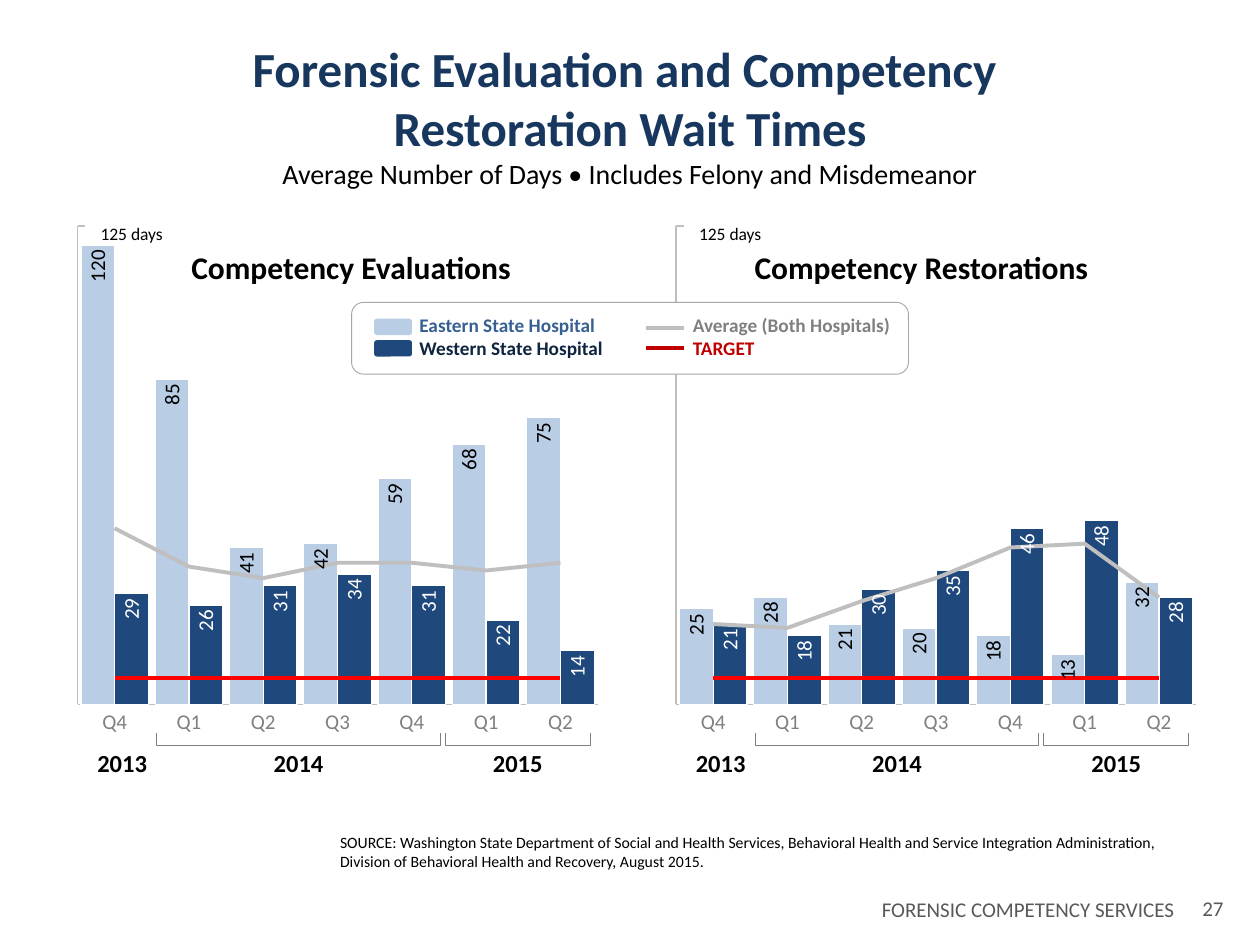
from lxml import etree
from pptx import Presentation
from pptx.chart.data import CategoryChartData
from pptx.dml.color import RGBColor
from pptx.enum.chart import XL_CHART_TYPE as CT, XL_LABEL_POSITION as LP
from pptx.enum.chart import XL_MARKER_STYLE as MS, XL_TICK_LABEL_POSITION as TLP, XL_TICK_MARK as TM
from pptx.enum.shapes import MSO_CONNECTOR as CONN, MSO_SHAPE as SHP
from pptx.enum.text import PP_ALIGN as AL
from pptx.oxml import parse_xml
from pptx.oxml.ns import nsdecls, qn
from pptx.util import Inches, Pt

rgb = RGBColor.from_string
prs = Presentation()
prs.slide_width, prs.slide_height = Inches(10), Inches(7.5)
COL, ROW = prs.slide_width / 10, prs.slide_height / 7.5
s = prs.slides.add_slide(prs.slide_layouts[6])


def grid(x, y, x2, y2):
    return int(x * COL), int(y * ROW), int(x2 * COL), int(y2 * ROW)


def add_text(place, lines, align=AL.LEFT, inset=True):
    tf = s.shapes.add_textbox(*grid(*place)).text_frame
    tf.word_wrap = True
    if not inset:
        tf.margin_left = tf.margin_right = tf.margin_top = tf.margin_bottom = 0
    for i, (text, size, color, bold) in enumerate(lines):
        p = tf.add_paragraph() if i else tf.paragraphs[0]
        p.alignment = align
        r = p.add_run()
        r.text = text
        r.font.name, r.font.size, r.font.bold = "Calibri", Pt(size), bold
        r.font.color.rgb = rgb(color)


# Title
add_text((0.31, 0.26, 9.38, 1.31), [
    ("Forensic Evaluation and Competency ", 28, "17375E", True),
    ("Restoration Wait Times", 28, "17375E", True),
    ("Average Number of Days • Includes Felony and Misdemeanor", 16, "000000", False),
], AL.CENTER)

# Two panels: chart, heading, scale note and year brackets
panels = [
    (0.53, "Competency Evaluations", 1.42,
     [120, 85, 41, 42, 59, 68, 75], [29, 26, 31, 34, 31, 22, 14], [46, 36, 33, 37, 37, 35, 37]),
    (5.28, "Competency Restorations", 5.89,
     [25, 28, 21, 20, 18, 13, 32], [21, 18, 30, 35, 46, 48, 28], [21, 20, 27, 33, 41, 42, 28]),
]
for left, heading, heading_left, eastern, western, average in panels:
    data = CategoryChartData(number_format="General")
    data.categories = ["Q4", "Q1", "Q2", "Q3", "Q4", "Q1", "Q2"]
    data.add_series("Series 1", eastern)
    data.add_series("Series 2", western)
    data.add_series("Series 3", [7] * 7)
    data.add_series("Series 4", average)
    chart = s.shapes.add_chart(CT.COLUMN_CLUSTERED, *grid(left, 1.71, 4.3, 4.22), data).chart
    chart.has_title = chart.has_legend = False
    chart.font.name, chart.font.size = "Calibri", Pt(18)
    chart.font.color.rgb = rgb("000000")

    # Target and average become lines on the same axes
    bars = chart.plots[0]
    bar_xml = bars._element
    line_xml = parse_xml(f'<c:lineChart {nsdecls("c")}><c:grouping val="standard"/>'
                         '<c:varyColors val="0"/></c:lineChart>')
    for ser in bar_xml.findall(qn("c:ser"))[2:]:
        for bar_only in ser.findall(qn("c:invertIfNegative")):
            ser.remove(bar_only)
        line_xml.append(ser)
    etree.SubElement(line_xml, qn("c:marker")).set("val", "1")
    for axis_id in bar_xml.findall(qn("c:axId")):
        etree.SubElement(line_xml, qn("c:axId")).set("val", axis_id.get("val"))
    bar_xml.addnext(line_xml)

    # Fixed plot area
    plot_area = bar_xml.getparent()
    for old in plot_area.findall(qn("c:layout")):
        plot_area.remove(old)
    plot_area.insert(0, parse_xml(
        f'<c:layout {nsdecls("c")}><c:manualLayout><c:layoutTarget val="inner"/>'
        '<c:xMode val="edge"/><c:yMode val="edge"/><c:x val="0.02"/><c:y val="0.02"/>'
        '<c:w val="0.96"/><c:h val="0.9"/></c:manualLayout></c:layout>'))

    # Bars with upright labels
    bars.gap_width, bars.overlap, bars.vary_by_categories = 20, 0, False
    for ser, fill, ink in zip(bars.series, ("B9CDE5", "1F497D"), ("000000", "FFFFFF")):
        ser.format.fill.solid()
        ser.format.fill.fore_color.rgb = rgb(fill)
        ser.format.line.color.rgb = rgb("FFFFFF")
        ser.format.line.width = Pt(0.75)
        labels = ser.data_labels
        labels.show_value, labels.position = True, LP.INSIDE_END
        labels.number_format, labels.number_format_is_linked = "#,##0", False
        labels.font.size = Pt(12)
        labels.font.color.rgb = rgb(ink)
        body = labels._element.find(qn("c:txPr")).find(qn("a:bodyPr"))
        body.set("rot", "-5400000")
        body.set("vert", "horz")

    # Lines
    for ser, color in zip(chart.plots[1].series, ("FF0000", "BFBFBF")):
        ser.format.line.color.rgb = rgb(color)
        ser.format.line.width = Pt(2.25)
        ser.marker.style = MS.NONE
        ser.smooth = False

    # Axes
    cat, val = chart.category_axis, chart.value_axis
    cat.major_tick_mark = TM.NONE
    cat.tick_labels.font.size = Pt(12)
    cat.tick_labels.font.color.rgb = rgb("808080")
    val.minimum_scale, val.maximum_scale, val.major_unit = 0, 125, 125
    val.has_major_gridlines = False
    val.major_tick_mark, val.tick_label_position = TM.INSIDE, TLP.NONE
    for axis in (cat, val):
        axis.format.line.color.rgb = rgb("BFBFBF")
        axis.format.line.width = Pt(0.75)

    add_text((heading_left, 1.92, 3.5, 0.4), [(heading, 18, "000000", True)])
    add_text((left + 0.17, 1.72, 0.73, 0.27), [("125 days", 10, "000000", False)])

    # Years, with brackets turned to open upwards
    for year, dx in (("2013", 0.09), ("2014", 1.49), ("2015", 3.23)):
        add_text((left + dx, 5.94, 0.7, 0.24), [(year, 14, "000000", True)], AL.CENTER, False)
    for middle, span in ((1.84, 2.25), (3.58, 1.15)):
        sp = s.shapes.add_shape(SHP.RIGHT_BRACKET,
                                *grid(left + middle - 0.05, 5.87 - span / 2, 0.1, span))
        sp.rotation, sp.adjustments[0] = 90, 0
        sp.shadow.inherit = False
        sp.fill.background()
        sp.line.color.rgb = rgb("808080")
        sp.line.width = Pt(0.5)

# Legend frame and swatches
for place, fill, border in (
    ((2.79, 2.4, 4.42, 0.57), "FFFFFF", "A6A6A6"),
    ((2.97, 2.53, 0.3, 0.13), "B9CDE5", None),
    ((2.97, 2.7, 0.3, 0.13), "1F497D", None),
):
    sp = s.shapes.add_shape(SHP.ROUNDED_RECTANGLE, *grid(*place))
    sp.shadow.inherit = False
    sp.fill.solid()
    sp.fill.fore_color.rgb = rgb(fill)
    if border:
        sp.line.color.rgb = rgb(border)
        sp.line.width = Pt(0.5)
    else:
        sp.line.fill.background()

for y, color in ((2.6, "BFBFBF"), (2.76, "C00000")):
    line = s.shapes.add_connector(CONN.STRAIGHT, *grid(5.13, y, 5.43, y))
    line.line.color.rgb = rgb(color)
    line.line.width = Pt(2.25)
    etree.SubElement(line._element.spPr, qn("a:effectLst"))

# Legend labels
add_text((3.23, 2.44, 2.19, 0.47), [("Eastern State Hospital", 11, "376092", True),
                                    ("Western State Hospital", 11, "0F243E", True)])
add_text((5.4, 2.44, 1.78, 0.47), [("Average (Both Hospitals)", 11, "808080", True),
                                   ("TARGET", 11, "C00000", True)])

# Source and footer
add_text((2.6, 6.56, 6.75, 0.4), [(
    "SOURCE: Washington State Department of Social and Health Services, Behavioral Health and "
    "Service Integration Administration, Division of Behavioral Health and Recovery, August 2015.",
    9, "000000", False)])
add_text((5.02, 7.07, 4.4, 0.3), [("FORENSIC COMPETENCY SERVICES", 12, "595959", False)], AL.RIGHT)
add_text((8.91, 7.06, 0.9, 0.3), [("27", 12, "595959", False)], AL.RIGHT)

prs.save("out.pptx")
